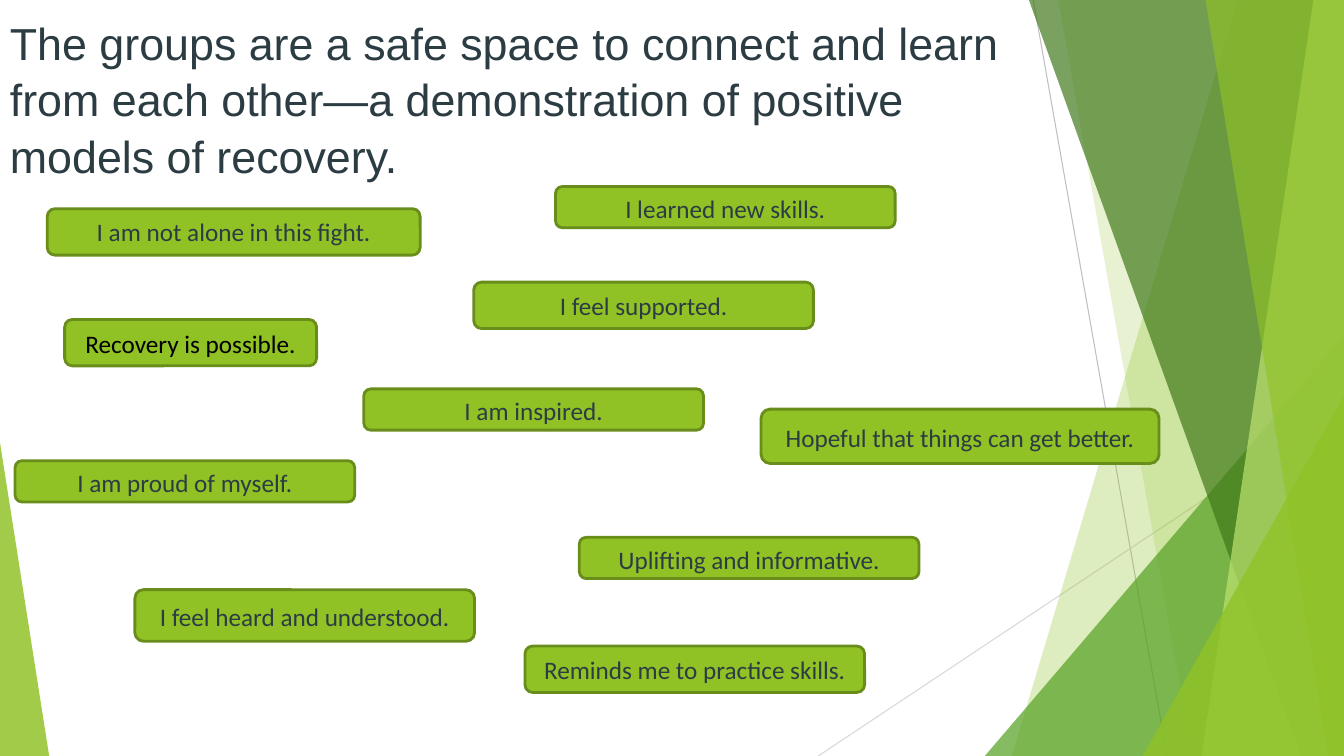
import pptx
import pptx.dml.color
import pptx.enum.shapes
import pptx.enum.text
import pptx.oxml.ns
import pptx.oxml.xmlchemy
import pptx.util

Cm = pptx.util.Cm
Pt = pptx.util.Pt
RGBColor = pptx.dml.color.RGBColor
MSO_SHAPE = pptx.enum.shapes.MSO_SHAPE
MSO_ANCHOR = pptx.enum.text.MSO_ANCHOR
PP_ALIGN = pptx.enum.text.PP_ALIGN
OxmlElement = pptx.oxml.xmlchemy.OxmlElement

LIME = RGBColor(0x90, 0xC2, 0x26)
OLIVE = RGBColor(0x69, 0x8D, 0x1B)
GREEN = RGBColor(0x54, 0xA0, 0x21)
FOREST = RGBColor(0x3F, 0x78, 0x18)
PALE_LIME = RGBColor(0xBF, 0xE4, 0x71)
SLATE = RGBColor(0x2C, 0x3C, 0x43)
BLACK = RGBColor(0x00, 0x00, 0x00)
GREY = RGBColor(0xBF, 0xBF, 0xBF)
LIGHT_GREY = RGBColor(0xD8, 0xD8, 0xD8)

WIDTH, HEIGHT = 33.87, 19.05

HEADLINE = (
    "The groups are a safe space to connect and learn from each other"
    "—a demonstration of positive models of recovery."
)
RAYS = [
    (26.04, 0, 29.41, HEIGHT, GREY),
    (WIDTH, 10.24, 20.62, HEIGHT, LIGHT_GREY),
]
BACK_BLADES = [(31.19, 25.5, LIME, 29), (26.67, 30.05, LIME, 20)]
FRONT_BLADES = [
    (25.93, 32.79, FOREST, 69),
    (33.1, 30.28, PALE_LIME, 69),
    (30.38, 33.48, LIME, 64),
]
QUOTES = [
    ("Uplifting and informative.", 14.6, 13.54, 8.56, 1.04, 1.07, SLATE),
    ("I am proud of myself.", 0.38, 11.61, 8.56, 1.04, 1.07, SLATE),
    ("I am inspired.", 9.17, 9.8, 8.56, 1.04, 1.07, SLATE),
    ("I learned new skills.", 14, 4.7, 8.56, 1.04, 1.07, SLATE),
    ("I feel supported.", 11.94, 7.11, 8.56, 1.17, 1, SLATE),
    ("I am not alone in this fight.", 1.19, 5.26, 9.4, 1.17, 1, SLATE),
    ("Recovery is possible.", 1.63, 8.05, 6.35, 1.17, 1.07, BLACK),
    ("I feel heard and understood.", 3.4, 14.86, 8.56, 1.3, 1.07, SLATE),
    ("Hopeful that things can get better.", 19.18, 10.31, 10.03, 1.37, 1.07, SLATE),
    ("Reminds me to practice skills.", 13.23, 16.28, 8.56, 1.17, 1, SLATE),
]


def write_text(frame, text, *, font, size, color, align, anchor, spacing):
    frame.word_wrap = True
    frame.vertical_anchor = anchor
    frame.margin_left = frame.margin_right = Cm(0.25)
    frame.margin_top = frame.margin_bottom = Cm(0.13)
    paragraph = frame.paragraphs[0]
    paragraph.alignment = align
    paragraph.line_spacing = spacing
    run = paragraph.add_run()
    run.text = text
    run.font.name = font
    run.font.size = Pt(size)
    run.font.color.rgb = color


class RecoverySlide:
    title_font = "Arial"
    quote_font = "Calibri"

    def __init__(self, presentation):
        self.slide = presentation.slides.add_slide(presentation.slide_layouts[5])
        self.shapes = self.slide.shapes

    def title(self, text, left, top, width, height):
        headline = self.shapes.title
        headline.left, headline.top = Cm(left), Cm(top)
        headline.width, headline.height = Cm(width), Cm(height)
        write_text(headline.text_frame, text, font=self.title_font, size=32,
                   color=SLATE, align=PP_ALIGN.LEFT, anchor=MSO_ANCHOR.TOP,
                   spacing=1.05)
        headline.text_frame.auto_size = pptx.enum.text.MSO_AUTO_SIZE.SHAPE_TO_FIT_TEXT

    def ray(self, x1, y1, x2, y2, color):
        ray = self.shapes.add_connector(
            pptx.enum.shapes.MSO_CONNECTOR.STRAIGHT, Cm(x1), Cm(y1), Cm(x2), Cm(y2))
        ray.line.color.rgb = color
        ray.line.width = Pt(0.75)
        ray._element.spPr.append(OxmlElement("a:effectLst"))

    def glaze(self, facet, color, opacity):
        facet.shadow.inherit = False
        facet.line.fill.background()
        facet.fill.solid()
        facet.fill.fore_color.rgb = color
        tint = facet._element.spPr.find(".//" + pptx.oxml.ns.qn("a:srgbClr"))
        alpha = OxmlElement("a:alpha")
        alpha.set("val", str(opacity * 1000))
        tint.append(alpha)

    def blade(self, top_x, bottom_x, color, opacity):
        outline = self.shapes.build_freeform(Cm(top_x), 0)
        corners = [(WIDTH, 0), (WIDTH, HEIGHT), (bottom_x, HEIGHT)]
        outline.add_line_segments([(Cm(x), Cm(y)) for x, y in corners])
        self.glaze(outline.convert_to_shape(), color, opacity)

    def wedge(self, left, top, width, apex, color, opacity):
        wedge = self.shapes.add_shape(
            MSO_SHAPE.ISOSCELES_TRIANGLE, Cm(left), Cm(top), Cm(width), Cm(HEIGHT - top))
        wedge.adjustments[0] = apex
        self.glaze(wedge, color, opacity)

    def quote(self, text, left, top, width, height, spacing, color):
        bubble = self.shapes.add_shape(
            MSO_SHAPE.ROUNDED_RECTANGLE, Cm(left), Cm(top), Cm(width), Cm(height))
        bubble.shadow.inherit = False
        bubble.fill.solid()
        bubble.fill.fore_color.rgb = LIME
        bubble.line.color.rgb = OLIVE
        bubble.line.width = Pt(2)
        write_text(bubble.text_frame, text, font=self.quote_font, size=18,
                   color=color, align=PP_ALIGN.CENTER, anchor=MSO_ANCHOR.MIDDLE,
                   spacing=spacing)


def main():
    presentation = pptx.Presentation()
    presentation.slide_width = Cm(WIDTH)
    presentation.slide_height = Cm(HEIGHT)
    recovery = RecoverySlide(presentation)
    recovery.title(HEADLINE, 0, 0.2, 26.72, 4.37)
    for ray in RAYS:
        recovery.ray(*ray)
    for blade in BACK_BLADES:
        recovery.blade(*blade)
    recovery.wedge(24.82, 8.46, WIDTH - 24.82, 1, GREEN, 71)
    for blade in FRONT_BLADES:
        recovery.blade(*blade)
    recovery.wedge(28.8, 9.98, WIDTH - 28.8, 1, LIME, 80)
    recovery.wedge(0, 11.15, 1.24, 0, LIME, 84)
    for quote in QUOTES:
        recovery.quote(*quote)
    presentation.save("out.pptx")


if __name__ == "__main__":
    main()
